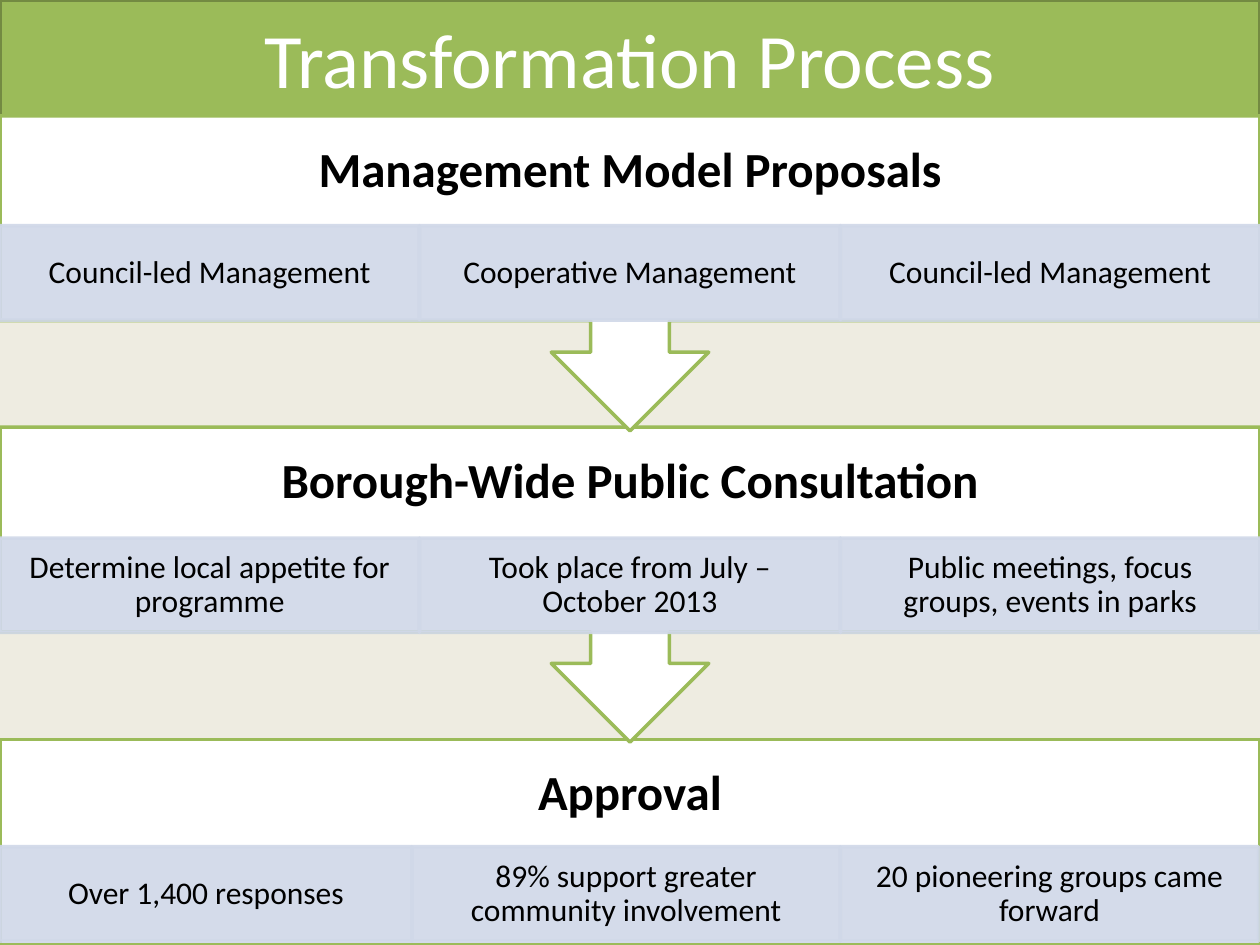
from dataclasses import dataclass
from itertools import accumulate

from lxml import etree
from pptx import Presentation
from pptx.dml.color import RGBColor
from pptx.enum.shapes import MSO_SHAPE
from pptx.enum.text import MSO_ANCHOR, PP_ALIGN
from pptx.oxml.ns import qn
from pptx.util import Inches, Pt

RECT = MSO_SHAPE.RECTANGLE
CALL = MSO_SHAPE.UP_ARROW_CALLOUT
MID = MSO_ANCHOR.MIDDLE
CENTER = PP_ALIGN.CENTER


@dataclass(frozen=True)
class Theme:
    font: str = "Calibri"
    back: str = "EEECE1"
    green: str = "9BBB59"
    edge: str = "738A42"
    cell: str = "D0D8E8"
    white: str = "FFFFFF"
    black: str = "000000"
    title: int = 44
    head: int = 28
    body: int = 18
    line: int = 2
    alpha: int = 90


THEME = Theme()
WIDE = 10
BAR = 0.92
HEAD = 0.88
ROW = 0.75
THIRDS = (3.33, 3.34, 3.33)

STEPS = (
    (5.87, 1.63, 0.85, False, (3.27, 3.4, 3.32), "Approval",
     ("Over 1,400 responses", "89% support greater community involvement",
      "20 pioneering groups came forward")),
    (3.39, 2.5, HEAD, True, THIRDS, "Borough-Wide Public Consultation",
     ("Determine local appetite for programme",
      "Took place from July – October 2013",
      "Public meetings, focus groups, events in parks")),
    (BAR, 2.5, 0.87, True, THIRDS, "Management Model Proposals",
     ("Council-led Management", "Cooperative Management",
      "Council-led Management")),
)


def rgb(code):
    return RGBColor.from_string(code)


def fade(shape):
    for tint in shape._element.spPr.iter(qn("a:srgbClr")):
        alpha = etree.SubElement(tint, qn("a:alpha"))
        alpha.set("val", str(THEME.alpha * 1000))


def panel(slide, kind, box, fill, line):
    shape = slide.shapes.add_shape(kind, *map(Inches, box))
    shape.shadow.inherit = False
    shape.fill.solid()
    shape.fill.fore_color.rgb = rgb(fill)
    shape.line.color.rgb = rgb(line)
    shape.line.width = Pt(THEME.line)
    return shape


def write(shape, text, size, color, pad, bold=False, space=0.9):
    frame = shape.text_frame
    frame.word_wrap = True
    frame.vertical_anchor = MID
    frame.margin_left = frame.margin_right = Inches(pad[0])
    frame.margin_top = frame.margin_bottom = Inches(pad[1])
    para = frame.paragraphs[0]
    para.alignment = CENTER
    para.line_spacing = space
    run = para.add_run()
    run.text = text
    run.font.name = THEME.font
    run.font.size = Pt(size)
    run.font.bold = bold
    run.font.color.rgb = rgb(color)


def banner(slide, box, text):
    shape = panel(slide, RECT, box, THEME.green, THEME.edge)
    write(shape, text, THEME.title, THEME.white, (0.1, 0.05), space=1.0)


def cells(slide, box, widths, texts):
    left, top, _, high = box
    starts = accumulate(widths, initial=left)
    for start, wide, text in zip(starts, widths, texts):
        shape = panel(slide, RECT, (start, top, wide, high),
                      THEME.cell, THEME.cell)
        fade(shape)
        write(shape, text, THEME.body, THEME.black, (0.14, 0.03))


def stage(slide, box, drop, arrow, widths, head, texts):
    left, top, wide, _ = box
    shape = panel(slide, CALL if arrow else RECT, box,
                  THEME.white, THEME.green)
    if arrow:
        shape.rotation = 180
    label = slide.shapes.add_textbox(*map(Inches, (left, top, wide, HEAD)))
    write(label, head, THEME.head, THEME.black, (0.22, 0.22), bold=True)
    cells(slide, (left, top + drop, wide, ROW), widths, texts)


def main():
    deck = Presentation()
    deck.slide_width = Inches(WIDE)
    deck.slide_height = Inches(7.5)
    slide = deck.slides.add_slide(deck.slide_layouts[6])
    slide.background.fill.solid()
    slide.background.fill.fore_color.rgb = rgb(THEME.back)
    banner(slide, (0, 0, WIDE, BAR), "Transformation Process")
    for top, high, *rest in STEPS:
        stage(slide, (0, top, WIDE, high), *rest)
    deck.save("out.pptx")


if __name__ == "__main__":
    main()
